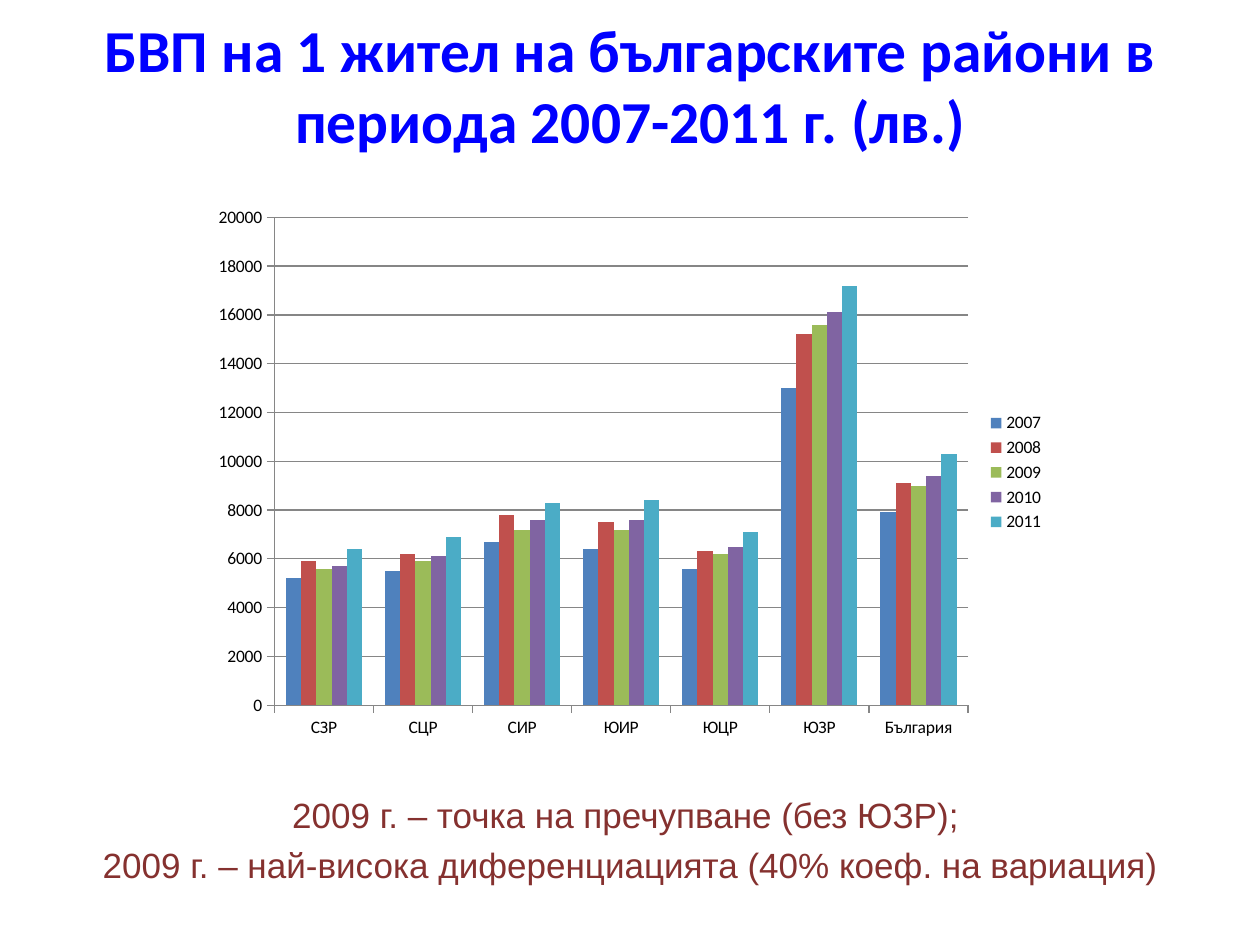
from dataclasses import dataclass

import pptx
import pptx.chart.data
import pptx.dml.color
import pptx.enum.chart
import pptx.enum.text
import pptx.util

Inches = pptx.util.Inches
Pt = pptx.util.Pt
RGBColor = pptx.dml.color.RGBColor

BLUE = RGBColor(0x00, 0x00, 0xFF)
MAROON = RGBColor(0x85, 0x31, 0x2F)
BLACK = RGBColor(0x00, 0x00, 0x00)
AXIS_GRAY = RGBColor(0x86, 0x86, 0x86)


@dataclass(frozen=True)
class TextBlock:
    lines: tuple[str, ...]
    left: float
    top: float
    width: float
    height: float
    font_name: str
    size: float
    color: RGBColor
    bold: bool = False
    anchor: pptx.enum.text.MSO_ANCHOR = pptx.enum.text.MSO_ANCHOR.TOP
    space_before: float = 0


@dataclass(frozen=True)
class YearSeries:
    year: str
    values: tuple[int, ...]
    color: RGBColor


TEXT_BLOCKS = (
    TextBlock(
        ("БВП на 1 жител на българските райони в периода 2007-2011 г. (лв.)",),
        0.5, 0.17, 9, 1, "Calibri", 34, BLUE,
        bold=True, anchor=pptx.enum.text.MSO_ANCHOR.MIDDLE,
    ),
    TextBlock(
        (
            "2009 г. – точка на пречупване (без ЮЗР); ",
            "2009 г. – най-висока диференциацията (40% коеф. на вариация)",
        ),
        0.42, 6.25, 9.17, 0.83, "Arial", 20, MAROON, space_before=4.6,
    ),
)

REGIONS = ("СЗР", "СЦР", "СИР", "ЮИР", "ЮЦР", "ЮЗР", "България")
YEARS = (
    YearSeries("2007", (5200, 5500, 6700, 6400, 5600, 13000, 7900), RGBColor(0x4F, 0x81, 0xBD)),
    YearSeries("2008", (5900, 6200, 7800, 7500, 6300, 15200, 9100), RGBColor(0xC0, 0x50, 0x4D)),
    YearSeries("2009", (5600, 5900, 7200, 7200, 6200, 15600, 9000), RGBColor(0x9B, 0xBB, 0x59)),
    YearSeries("2010", (5700, 6100, 7600, 7600, 6500, 16100, 9400), RGBColor(0x80, 0x64, 0xA2)),
    YearSeries("2011", (6400, 6900, 8300, 8400, 7100, 17200, 10300), RGBColor(0x4B, 0xAC, 0xC6)),
)


def add_text(slide: pptx.slide.Slide, block: TextBlock) -> None:
    shape = slide.shapes.add_textbox(
        Inches(block.left), Inches(block.top), Inches(block.width), Inches(block.height)
    )
    frame = shape.text_frame
    frame.word_wrap = True
    frame.vertical_anchor = block.anchor
    frame.text = "\n".join(block.lines)
    for paragraph in frame.paragraphs:
        paragraph.alignment = pptx.enum.text.PP_ALIGN.CENTER
        paragraph.space_before = Pt(block.space_before)
        paragraph.font.name = block.font_name
        paragraph.font.size = Pt(block.size)
        paragraph.font.bold = block.bold
        paragraph.font.color.rgb = block.color


def add_gdp_chart(slide: pptx.slide.Slide) -> None:
    chart_data = pptx.chart.data.CategoryChartData(number_format="General")
    chart_data.categories = REGIONS
    for year in YEARS:
        chart_data.add_series(year.year, year.values)
    chart = slide.shapes.add_chart(
        pptx.enum.chart.XL_CHART_TYPE.COLUMN_CLUSTERED,
        Inches(1.6), Inches(1.56), Inches(6.79), Inches(4.38), chart_data,
    ).chart
    chart.has_title = False
    chart.font.name = "Calibri"
    chart.font.size = Pt(10)
    chart.font.color.rgb = BLACK

    # Columns
    plot = chart.plots[0]
    plot.gap_width = 150
    plot.overlap = 0
    plot.vary_by_categories = False
    for series, year in zip(plot.series, YEARS):
        series.format.fill.solid()
        series.format.fill.fore_color.rgb = year.color

    # Axes and gridlines
    value_axis = chart.value_axis
    value_axis.minimum_scale = 0
    value_axis.maximum_scale = 20000
    value_axis.major_unit = 2000
    value_axis.has_major_gridlines = True
    for axis in (chart.category_axis, value_axis):
        axis.major_tick_mark = pptx.enum.chart.XL_TICK_MARK.OUTSIDE
        axis.minor_tick_mark = pptx.enum.chart.XL_TICK_MARK.NONE
    for part in (chart.category_axis, value_axis, value_axis.major_gridlines):
        part.format.line.color.rgb = AXIS_GRAY
        part.format.line.width = Pt(0.75)

    # Legend
    chart.has_legend = True
    chart.legend.position = pptx.enum.chart.XL_LEGEND_POSITION.RIGHT
    chart.legend.include_in_layout = False


def main() -> None:
    presentation = pptx.Presentation()
    presentation.slide_width = Inches(10)
    presentation.slide_height = Inches(7.5)
    slide = presentation.slides.add_slide(presentation.slide_layouts[6])
    for block in TEXT_BLOCKS:
        add_text(slide, block)
    add_gdp_chart(slide)
    presentation.save("out.pptx")


if __name__ == "__main__":
    main()
